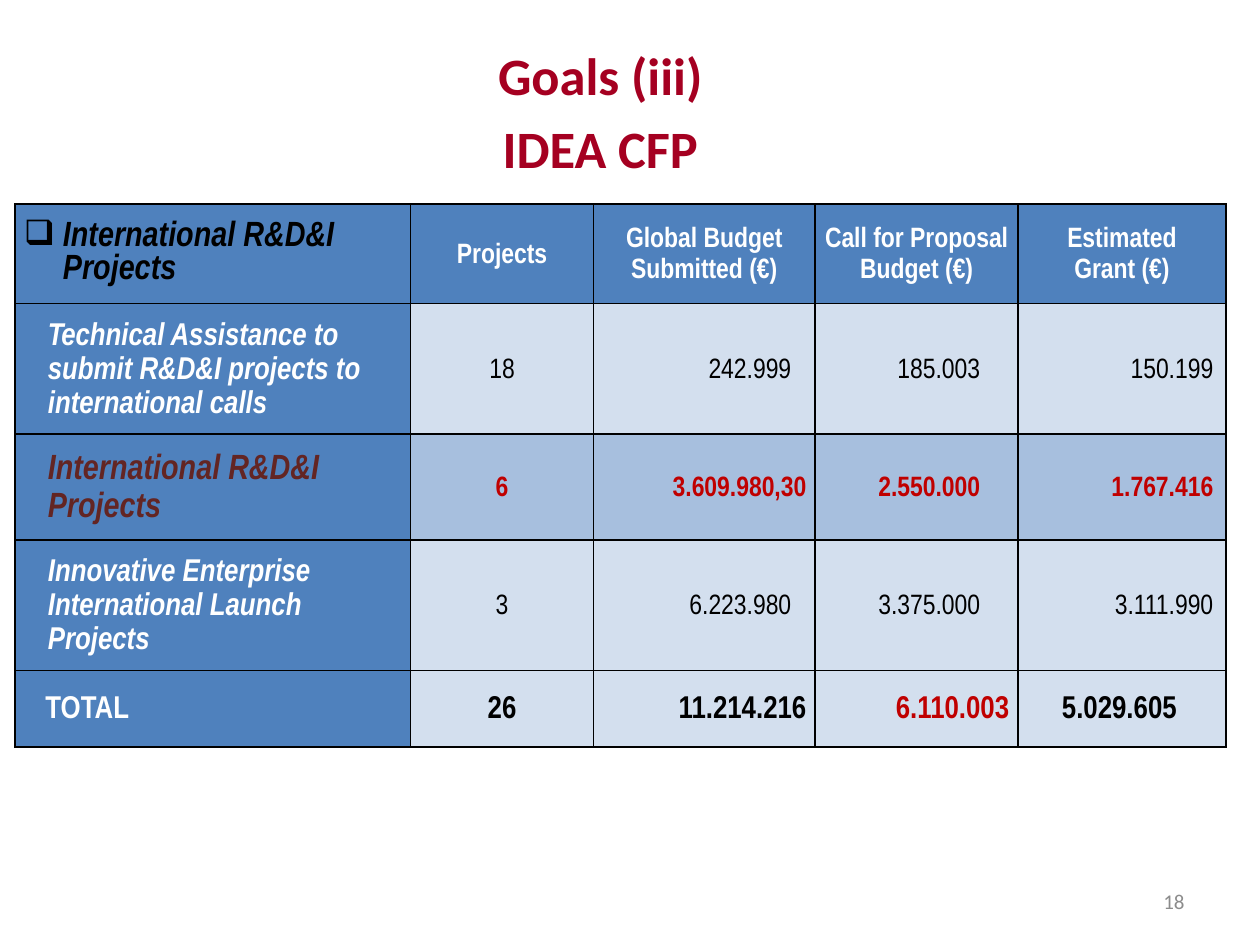
from dataclasses import dataclass, field

import pptx
import pptx.dml.color
import pptx.enum.text
import pptx.oxml
import pptx.oxml.ns
import pptx.util
from pptx.util import Inches

COLORS = {
    "title": "A50021", "number": "8C8C8C", "head": "4F81BD", "pale": "D3DFEE",
    "band": "A7BFDE", "black": "000000", "white": "FFFFFF", "red": "C00000",
    "brown": "632523",
}
ALIGN = pptx.enum.text.PP_ALIGN
MIDDLE = pptx.enum.text.MSO_ANCHOR.MIDDLE
NARROW = "Arial Narrow"
PAD = 0.07
COLUMN_WIDTHS = (3.14, 1.45, 1.76, 1.61, 1.65)


@dataclass
class TextStyle:
    size: float
    color: str
    bold: bool = False
    italic: bool = False
    font: str = NARROW


@dataclass
class CellText:
    text: str
    style: TextStyle
    align: ALIGN = ALIGN.RIGHT
    right: float = PAD
    indent: float = 0
    spacing: float = 1.15
    bullet: str = ""


@dataclass
class TableRow:
    height: float
    fill: str
    cells: list[CellText] = field(default_factory=list)


def rgb(name: str) -> pptx.dml.color.RGBColor:
    return pptx.dml.color.RGBColor.from_string(COLORS[name])


def set_values(target, values: dict) -> None:
    for name, value in values.items():
        setattr(target, name, value)


def write(para, text: str, style: TextStyle, layout: dict) -> None:
    set_values(para, layout)
    span = para.add_run()
    span.text = text
    set_values(span.font, {
        "name": style.font, "size": pptx.util.Pt(style.size),
        "bold": style.bold, "italic": style.italic,
    })
    span.font.color.rgb = rgb(style.color)


def add_borders(cell) -> None:
    properties = cell._tc.get_or_add_tcPr()
    for side in "LRTB":
        properties.append(pptx.oxml.parse_xml(
            f'<a:ln{side} {pptx.oxml.ns.nsdecls("a")} w="12700"><a:solidFill>'
            f'<a:srgbClr val="{COLORS["black"]}"/></a:solidFill></a:ln{side}>'))


def indent_para(para, indent: float, bullet: str) -> None:
    properties = para._p.get_or_add_pPr()
    properties.set("marL", str(Inches(indent)))
    properties.set("indent", str(Inches(-indent if bullet else 0)))
    if bullet:
        properties.append(pptx.oxml.parse_xml(
            f'<a:buChar {pptx.oxml.ns.nsdecls("a")} char="{bullet}"/>'))


def fill_cell(cell, content: CellText, fill: str) -> None:
    add_borders(cell)
    cell.fill.solid()
    cell.fill.fore_color.rgb = rgb(fill)
    set_values(cell, {
        "vertical_anchor": MIDDLE, "margin_left": Inches(PAD),
        "margin_right": Inches(content.right), "margin_top": 0, "margin_bottom": 0,
    })
    frame = cell.text_frame
    for index, line in enumerate(content.text.split("\n")):
        para = frame.add_paragraph() if index else frame.paragraphs[0]
        indent_para(para, content.indent, content.bullet)
        write(para, line, content.style,
              {"alignment": content.align, "line_spacing": content.spacing})


def add_budget_table(page, rows: list[TableRow]) -> None:
    frame = page.shapes.add_table(
        len(rows), len(COLUMN_WIDTHS), Inches(0.12), Inches(1.62),
        Inches(sum(COLUMN_WIDTHS)), Inches(sum(row.height for row in rows)))
    table = frame.table
    set_values(table, {"first_row": False, "horz_banding": False})
    for column, width in zip(table.columns, COLUMN_WIDTHS):
        column.width = Inches(width)
    for row_index, row in enumerate(rows):
        table.rows[row_index].height = Inches(row.height)
        for column_index, content in enumerate(row.cells):
            fill = row.fill if column_index else "head"
            fill_cell(table.cell(row_index, column_index), content, fill)


def add_text(page, at: tuple, lines: list[str], style: TextStyle, align: ALIGN,
             space: float = 0):
    box = page.shapes.add_textbox(*map(Inches, at))
    frame = box.text_frame
    frame.word_wrap = True
    for index, line in enumerate(lines):
        para = frame.add_paragraph() if index else frame.paragraphs[0]
        write(para, line, style, {
            "alignment": align, "space_before": pptx.util.Pt(space if index else 0)})
    return frame


def data_row(height: float, fill: str, label: CellText, values: tuple,
             style: TextStyle, rights: tuple) -> TableRow:
    count, *amounts = values
    cells = [label, CellText(count, style, ALIGN.CENTER)]
    cells += [CellText(text, style, right=right) for text, right in zip(amounts, rights)]
    return TableRow(height, fill, cells)


def row_label(text: str, style: TextStyle, indent: float = 0.19) -> CellText:
    return CellText(text, style, ALIGN.LEFT, indent=indent)


def budget_rows() -> list[TableRow]:
    heading = TextStyle(16, "white", bold=True)
    label = TextStyle(18, "white", bold=True, italic=True)
    plain = TextStyle(16, "black")
    total = TextStyle(18, "black", bold=True)
    rights = (0.19, 0.3, 0.1)

    # Header row
    corner = CellText("International R&D&I Projects",
                      TextStyle(20, "black", bold=True, italic=True),
                      ALIGN.LEFT, indent=0.31, spacing=1.0, bullet="❑")
    names = ("Projects", "Global Budget Submitted (€)",
             "Call for Proposal Budget (€)", "Estimated\nGrant (€)")
    header = TableRow(0.79, "head", [corner] + [
        CellText(name, heading, ALIGN.CENTER) for name in names])

    # Total row, with the call budget in red
    total_row = data_row(
        0.61, "pale", row_label("TOTAL", TextStyle(18, "white", bold=True), 0.17),
        ("26", "11.214.216", "6.110.003", "5.029.605"), total, (PAD, PAD, 0.39))
    total_row.cells[3].style = TextStyle(18, "red", bold=True)

    return [
        header,
        data_row(1.03, "pale", row_label(
            "Technical Assistance to submit R&D&I projects to international calls", label),
            ("18", "242.999", "185.003", "150.199"), plain, rights),
        data_row(0.84, "band", row_label(
            "International R&D&I Projects",
            TextStyle(20, "brown", bold=True, italic=True)),
            ("6", "3.609.980,30", "2.550.000", "1.767.416"),
            TextStyle(16, "red", bold=True), (PAD, 0.3, 0.1)),
        data_row(1.03, "pale", row_label(
            "Innovative Enterprise International Launch Projects", label),
            ("3", "6.223.980", "3.375.000", "3.111.990"), plain, rights),
        total_row,
    ]


def main() -> None:
    deck = pptx.Presentation()
    set_values(deck, {"slide_width": Inches(10), "slide_height": Inches(7.5)})
    page = deck.slides.add_slide(deck.slide_layouts[6])

    # Page number
    number = add_text(page, (7.17, 6.95, 2.33, 0.4), ["18"],
                      TextStyle(12, "number", font="Calibri"), ALIGN.RIGHT)
    number.vertical_anchor = MIDDLE

    # Budget table
    add_budget_table(page, budget_rows())

    # Title
    add_text(page, (1.46, 0.29, 6.61, 1.19), ["Goals (iii)", "IDEA CFP"],
             TextStyle(30, "title", bold=True, font="Calibri"), ALIGN.CENTER, space=6)

    deck.save("out.pptx")


if __name__ == "__main__":
    main()
